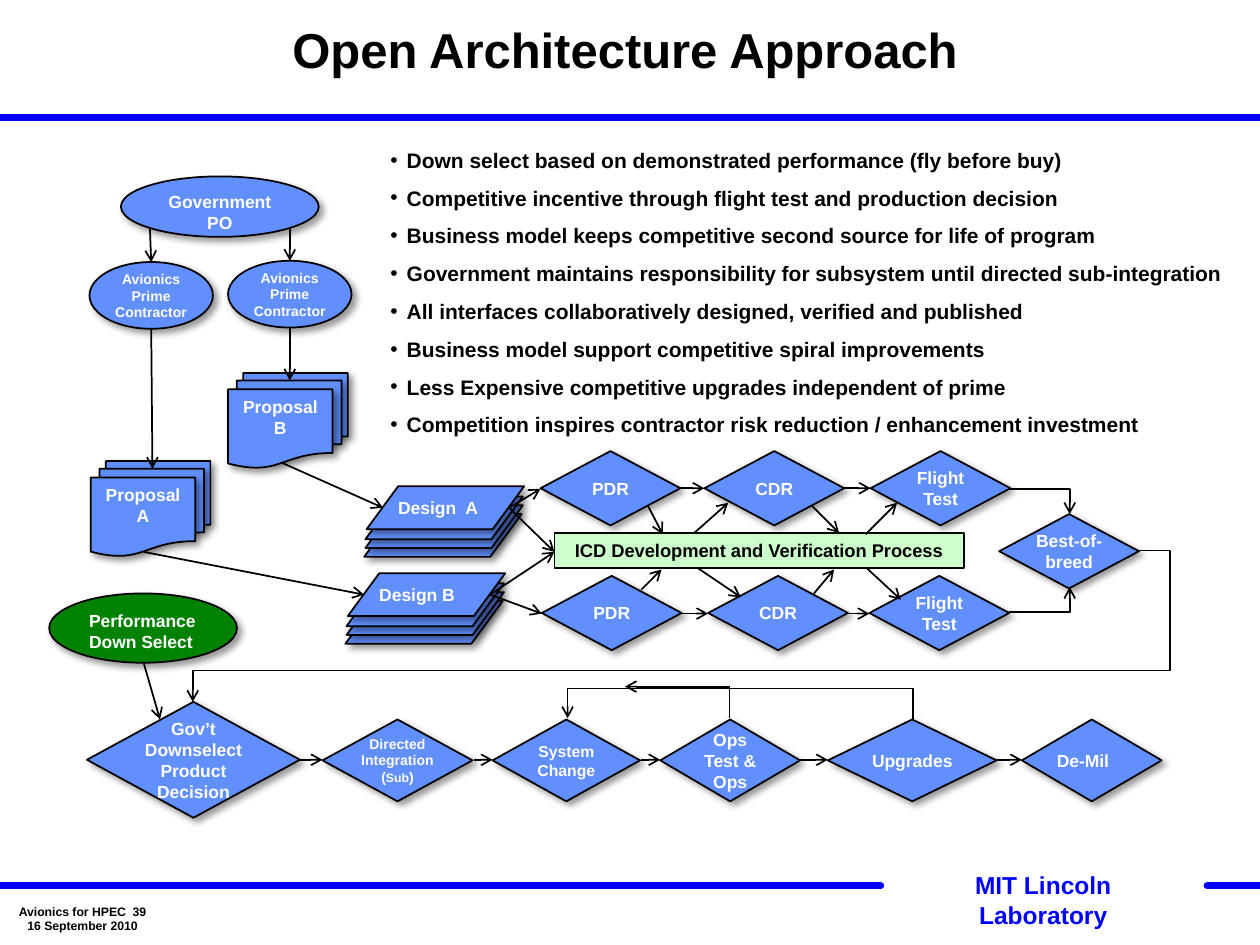
from dataclasses import dataclass
from typing import Any

from lxml import etree
from pptx import Presentation
from pptx import util as u
from pptx.dml import color
from pptx.enum import shapes, text
from pptx.oxml import ns

HUES = {"blue": "0000FF", "node": "618FFD", "green": "008200",
        "mint": "CCFFCC", "white": "FFFFFF", "black": "000000"}
KIND = shapes.MSO_SHAPE
OVAL, DOC, DATA = KIND.OVAL, KIND.FLOWCHART_DOCUMENT, KIND.FLOWCHART_DATA
GEM, RECT = KIND.FLOWCHART_DECISION, KIND.RECTANGLE
LEFT, MID = text.PP_ALIGN.LEFT, text.PP_ALIGN.CENTER
TOP, CORE = text.MSO_ANCHOR.TOP, text.MSO_ANCHOR.MIDDLE
COLS, ROWS = 1000, 750

deck = Presentation()
deck.slide_width, deck.slide_height = u.Inches(10), u.Inches(7.5)
slide = deck.slides.add_slide(deck.slide_layouts[6])
COL, ROW = deck.slide_width // COLS, deck.slide_height // ROWS


@dataclass
class Box:
    col: float
    row: float
    wide: float
    high: float

    def place(self) -> tuple:
        return (u.Emu(int(self.col * COL)), u.Emu(int(self.row * ROW)),
                u.Emu(int(self.wide * COL)), u.Emu(int(self.high * ROW)))

    def shift(self, dx: float, dy: float) -> "Box":
        return Box(self.col + dx, self.row + dy, self.wide, self.high)


@dataclass
class Node:
    kind: Any
    box: Box
    words: str = ""
    size: float = 10
    fill: str = "node"
    ink: str = "white"
    align: Any = MID
    snug: bool = True
    shade: bool = True


@dataclass
class Bend:
    box: Box
    form: str
    marks: dict
    gauge: tuple = ()


def hue(name: str) -> color.RGBColor:
    return color.RGBColor.from_string(HUES[name])


def apply(item: Any, form: dict) -> None:
    for key, value in form.items():
        setattr(item, key, value)


def add(root: Any, tag: str, **marks: str) -> Any:
    part = etree.SubElement(root, ns.qn(tag))
    for key, value in marks.items():
        part.set(key, value)
    return part


def write(frame: Any, words: str, size: float, ink: str, para: dict,
          form: dict, bullet: bool = False) -> None:
    apply(frame, {"word_wrap": True, **form})
    for index, line in enumerate(words.split("\n")):
        par = frame.paragraphs[0] if index == 0 else frame.add_paragraph()
        apply(par, para)
        if bullet:
            props = par._p.get_or_add_pPr()
            props.set("marL", str(13 * COL))
            props.set("indent", str(-13 * COL))
            add(props, "a:buFont", typeface="Arial")
            add(props, "a:buChar", char="•")
        for step, piece in enumerate(line.split("|")):
            run = par.add_run()
            run.text = piece
            apply(run.font, {"name": "Arial", "size": u.Pt(size - step % 2), "bold": True})
            run.font.color.rgb = hue(ink)


def label(box: Box, words: str, size: float, ink: str, para: dict,
          form: dict, bullet: bool = False) -> None:
    frame = slide.shapes.add_textbox(*box.place()).text_frame
    write(frame, words, size, ink, para, form, bullet)


def draw(node: Node) -> None:
    shape = slide.shapes.add_shape(node.kind, *node.box.place())
    shape.shadow.inherit = False
    shape.fill.solid()
    shape.fill.fore_color.rgb = hue(node.fill)
    shape.line.color.rgb = hue("black")
    shape.line.width = u.Pt(1)
    if node.shade:
        glow = add(shape._element.spPr.find(ns.qn("a:effectLst")), "a:outerShdw",
                   blurRad="50800", dist="38100", dir="2700000", algn="tl", rotWithShape="0")
        add(add(glow, "a:srgbClr", val=HUES["black"]), "a:alpha", val="40000")
    if node.words:
        form = {"vertical_anchor": CORE if node.snug else TOP}
        if node.snug:
            form.update(margin_left=0, margin_right=0)
        write(shape.text_frame, node.words, node.size, node.ink, {"alignment": node.align}, form)


def link(kind: Any, ends: tuple, ink: str = "black", width: float = 1, tip: bool = True) -> Any:
    spots = [u.Emu(int(n * (ROW if i % 2 else COL))) for i, n in enumerate(ends)]
    line = slide.shapes.add_connector(kind, *spots)
    line.line.color.rgb = hue(ink)
    line.line.width = u.Pt(width)
    edge = line.line._get_or_add_ln()
    if tip:
        add(edge, "a:tailEnd", type="arrow")
    else:
        edge.set("cap", "rnd")
    add(line._element.spPr, "a:effectLst")
    return line


def turn(bend: Bend) -> None:
    box = bend.box
    line = link(shapes.MSO_CONNECTOR.ELBOW,
                (box.col, box.row, box.col + box.wide, box.row + box.high))
    props = line._element.spPr
    for key, value in bend.marks.items():
        props.find(ns.qn("a:xfrm")).set(key, value)
    geom = props.find(ns.qn("a:prstGeom"))
    geom.set("prst", bend.form)
    for index, value in enumerate(bend.gauge, 1):
        add(geom.find(ns.qn("a:avLst")), "a:gd", name=f"adj{index}", fmla=f"val {value}")


def stack(node: Node, steps: list) -> None:
    for dx, dy in steps:
        draw(Node(node.kind, node.box.shift(dx, dy)))
    draw(node)


STRAIGHT = shapes.MSO_CONNECTOR.STRAIGHT
for ends in [(0, 93.5, COLS, 93.5), (958, 703, COLS, 703), (0, 703, 699, 703)]:
    link(STRAIGHT, ends, "blue", 4, False)

label(Box(711, 686, 234, 33), "MIT Lincoln Laboratory", 14, "blue", {"alignment": MID}, {})
label(Box(0, 709, 131, 40), "Avionics for HPEC  39\n16 September 2010", 7, "black",
      {"alignment": MID}, {"margin_left": 0, "margin_right": 0, "vertical_anchor": CORE})
label(Box(117, 0, 758, 83), "Open Architecture Approach", 28, "black",
      {"alignment": MID, "line_spacing": u.Pt(30)}, {"vertical_anchor": CORE})

POINTS = """Down select based on demonstrated performance (fly before buy)
Competitive incentive through flight test and production decision
Business model keeps competitive second source for life of program
Government maintains responsibility for subsystem until directed sub-integration
All interfaces collaboratively designed, verified and published
Business model support competitive spiral improvements
Less Expensive competitive upgrades independent of prime
Competition inspires contractor risk reduction / enhancement investment"""
label(Box(300, 102, 687, 252), POINTS, 12, "black", {"line_spacing": 1.5}, {}, True)

draw(Node(OVAL, Box(96, 140, 157, 48), "Government PO", snug=False))
draw(Node(OVAL, Box(39, 471, 149, 55), "Performance Down Select", fill="green",
          align=LEFT, snug=False))
for col, row in [(71, 208), (181, 207)]:
    draw(Node(OVAL, Box(col, row, 98, 53), "Avionics Prime Contractor", 8))

for col, row, name in [(181, 309, "Proposal B"), (72, 379, "Proposal A")]:
    stack(Node(DOC, Box(col, row, 83, 63), name, snug=False), [(12, -13), (7, -7)])
for col, row, name in [(291, 386, "Design  A"), (276, 455, "Design B")]:
    stack(Node(DATA, Box(col, row, 125, 34), name, align=LEFT), [(-2, 22), (-1, 15), (-1, 8)])

for row, cols in [(358, (429, 559, 691)), (457, (430, 562, 690))]:
    for col, name in zip(cols, ("PDR", "CDR", "Flight\nTest")):
        draw(Node(GEM, Box(col, row, 111, 59), name))
draw(Node(GEM, Box(793, 408, 111, 59), "Best-of-breed"))
draw(Node(GEM, Box(69, 557, 169, 92), "Gov’t Downselect Product Decision"))
for col, wide, name, size, align in [
        (256, 119, "Directed Integration (|Sub|)", 8, MID),
        (391, 117, "System Change", 9, MID),
        (524, 111, "Ops Test & Ops", 10, MID),
        (657, 134, "Upgrades", 10, MID),
        (811, 111, "De-Mil", 10, LEFT)]:
    draw(Node(GEM, Box(col, 571, wide, 65), name, size, align=align))
draw(Node(RECT, Box(440, 423, 325, 28), "ICD Development and Verification Process", 10.5,
          "mint", "black", snug=False, shade=False))

ARROWS = [
    (119, 181, 120, 208), (230, 181, 230, 207), (120, 261, 121, 372), (230, 260, 230, 302),
    (223, 367, 304, 403), (114, 438, 289, 472), (114, 526, 127, 571),
    (404, 403, 429, 388), (404, 403, 440, 438), (389, 472, 430, 487), (389, 472, 440, 438),
    (514, 401, 526, 424), (509, 468, 525, 452), (554, 451, 588, 474), (551, 423, 578, 399),
    (644, 401, 666, 423), (688, 451, 715, 476), (646, 471, 662, 452), (687, 424, 712, 399)]
CHAINS = {387.5: [(540, 559), (670, 691)], 487: [(541, 562), (673, 690)],
          603: [(237, 256), (376, 391), (509, 524), (634, 657), (791, 811)]}
ARROWS += [(a, row, b, row) for row, gaps in CHAINS.items() for a, b in gaps]
for ends in ARROWS:
    link(STRAIGHT, ends)

SPIN = {"rot": "16200000", "flipV": "1"}
for bend in [
        Bend(Box(802, 388, 47, 20), "bentConnector2", {}),
        Bend(Box(801, 466, 48, 20), "bentConnector2", {"flipV": "1"}),
        Bend(Box(153, 437, 751, 120), "bentConnector4", {"flipH": "1"}, (-3300, 79400)),
        Bend(Box(587, 433.5, 1, 274), "bentConnector3", SPIN, (2500000,)),
        Bend(Box(525, 516, 25, 83), "bentConnector2", SPIN)]:
    turn(bend)

deck.save("out.pptx")
